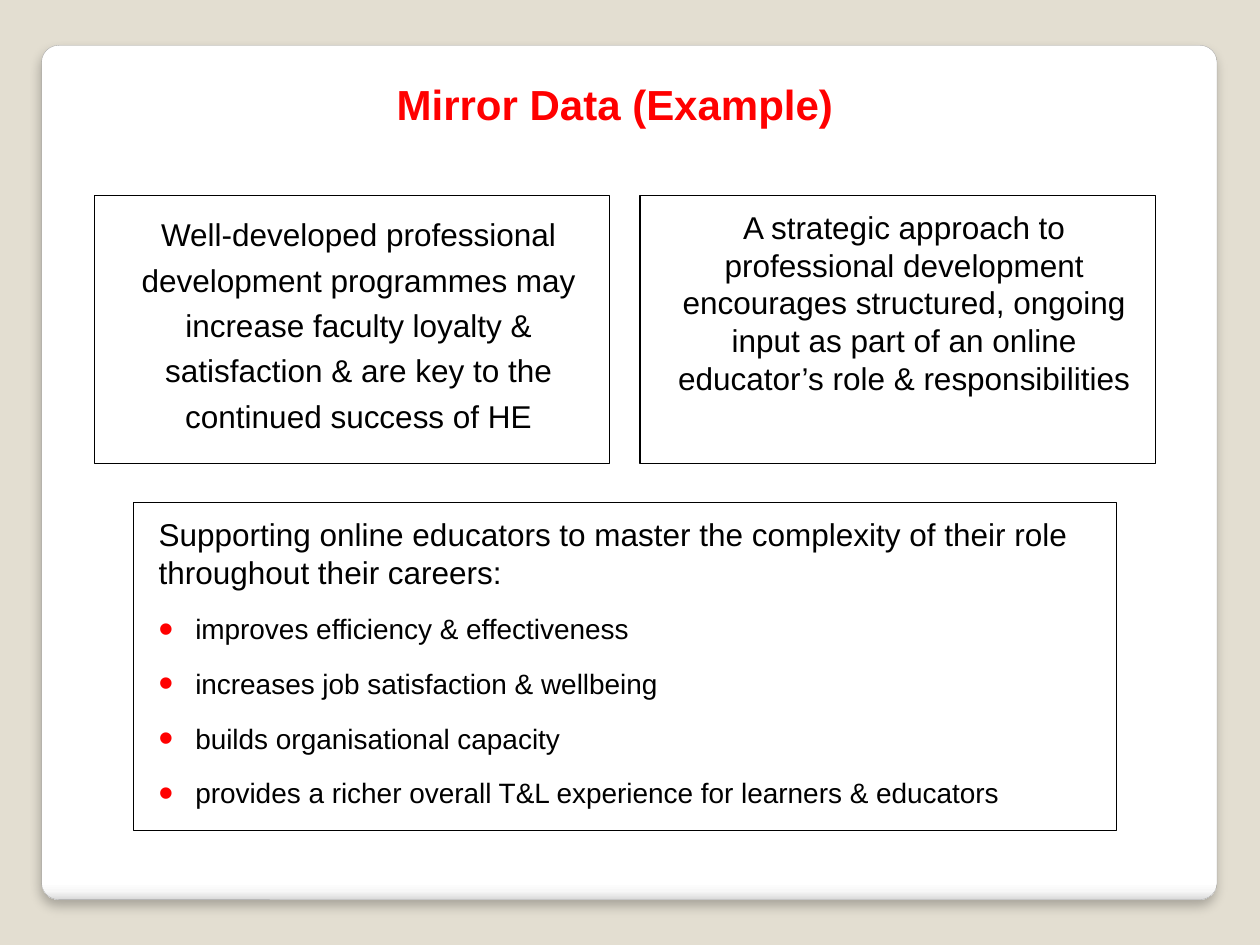
from lxml.etree import SubElement
from pptx import Presentation
from pptx.dml.color import RGBColor
from pptx.enum.shapes import MSO_SHAPE
from pptx.enum.text import MSO_ANCHOR, MSO_AUTO_SIZE, PP_ALIGN
from pptx.oxml import parse_xml
from pptx.oxml.ns import qn
from pptx.util import Inches, Pt

NS = 'xmlns:a="http://schemas.openxmlformats.org/drawingml/2006/main"'


def rgb(code):
    return RGBColor.from_string(code)


def write(para, text, size=18, color="000000", bold=False,
          align=PP_ALIGN.LEFT, space=6, line=1.0, bullet=False):
    para.alignment = align
    para.space_before = para.space_after = Pt(space)
    para.line_spacing = line
    run = para.add_run()
    run.text = text
    font = run.font
    font.name, font.size, font.bold = "Arial", Pt(size), bold
    font.color.rgb = rgb(color)
    if bullet:
        props = para._p.get_or_add_pPr()
        props.set("marL", str(Inches(0.29)))
        props.set("indent", str(Inches(-0.29)))
        tint = SubElement(props, qn("a:buClr"))
        SubElement(tint, qn("a:srgbClr"), val="FF0000")
        SubElement(props, qn("a:buSzPct"), val="150000")
        SubElement(props, qn("a:buFont"), typeface="Arial")
        SubElement(props, qn("a:buChar"), char="•")


deck = Presentation()
deck.slide_width, deck.slide_height = Inches(10), Inches(7.5)
slide = deck.slides.add_slide(deck.slide_layouts[5])
slide.background.fill.solid()
slide.background.fill.fore_color.rgb = rgb("E3DED1")
shapes = slide.shapes

# White panel with a shaded lower edge and a soft shadow
panel = shapes.add_shape(MSO_SHAPE.ROUNDED_RECTANGLE, Inches(0.33),
                         Inches(0.36), Inches(9.33), Inches(6.78))
panel.adjustments[0] = 0.02
panel.line.color.rgb = rgb("A4A4A4")
panel.line.width = Pt(0.16)
stops = [(0, "FFFFFF"), (98, "FFFFFF"), (99, "F7F7F7"), (100, "DADADA")]
marks = "".join(f'<a:gs pos="{pos * 1000}"><a:srgbClr val="{code}"/></a:gs>'
                for pos, code in stops)
fade = parse_xml(f'<a:gradFill {NS} rotWithShape="1"><a:gsLst>{marks}</a:gsLst>'
                 '<a:lin ang="5400000" scaled="0"/></a:gradFill>')
shade = parse_xml(f'<a:effectLst {NS}><a:outerShdw blurRad="{Pt(6)}" '
                  f'dist="{Pt(4)}" dir="5400000" algn="t" rotWithShape="0">'
                  '<a:srgbClr val="000000"><a:alpha val="25000"/></a:srgbClr>'
                  '</a:outerShdw></a:effectLst>')
props = panel._element.spPr
props.find(qn("a:prstGeom")).addnext(fade)
props.append(shade)

# Title, brought in front of the panel
title = shapes.title
shapes._spTree.append(title._element)
title.left, title.top = Inches(-0.04), Inches(0.41)
title.width, title.height = Inches(9.84), Inches(0.66)
frame = title.text_frame
frame.auto_size = MSO_AUTO_SIZE.NONE
frame.vertical_anchor = MSO_ANCHOR.BOTTOM
write(frame.paragraphs[0], "Mirror Data (Example)", size=24, color="FF0000",
      bold=True, align=PP_ALIGN.CENTER, space=0, line=1.2)

# Outlined boxes: place, then paragraphs with their format
mid = {"align": PP_ALIGN.CENTER}
item = {"size": 16, "bullet": True}
boxes = [
    ((0.75, 1.55, 4.09, 2.13), [
        ("Well-developed professional development programmes may increase "
         "faculty loyalty & satisfaction & are key to the continued success "
         "of HE", {**mid, "line": 1.2})]),
    ((1.06, 3.99, 7.8, 2.6), [
        ("Supporting online educators to master the complexity of their role "
         "throughout their careers:", {}),
        ("improves efficiency & effectiveness", item),
        ("increases job satisfaction & wellbeing", item),
        ("builds organisational capacity", item),
        ("provides a richer overall T&L experience for learners & educators",
         item)]),
    ((5.08, 1.55, 4.09, 2.13), [
        ("A strategic approach to professional development encourages "
         "structured, ongoing input as part of an online educator’s role & "
         "responsibilities", mid)]),
]
for place, paras in boxes:
    box = shapes.add_shape(MSO_SHAPE.RECTANGLE, *map(Inches, place))
    box.shadow.inherit = False
    box.fill.background()
    box.line.color.rgb = rgb("000000")
    box.line.width = Pt(0.75)
    frame = box.text_frame
    frame.word_wrap = True
    frame.vertical_anchor = MSO_ANCHOR.TOP
    frame.margin_left, frame.margin_right = Inches(0.2), Inches(0.1)
    frame.margin_top, frame.margin_bottom = Inches(0.1), Inches(0.05)
    for num, (text, style) in enumerate(paras):
        para = frame.add_paragraph() if num else frame.paragraphs[0]
        write(para, text, **style)

deck.save("out.pptx")
